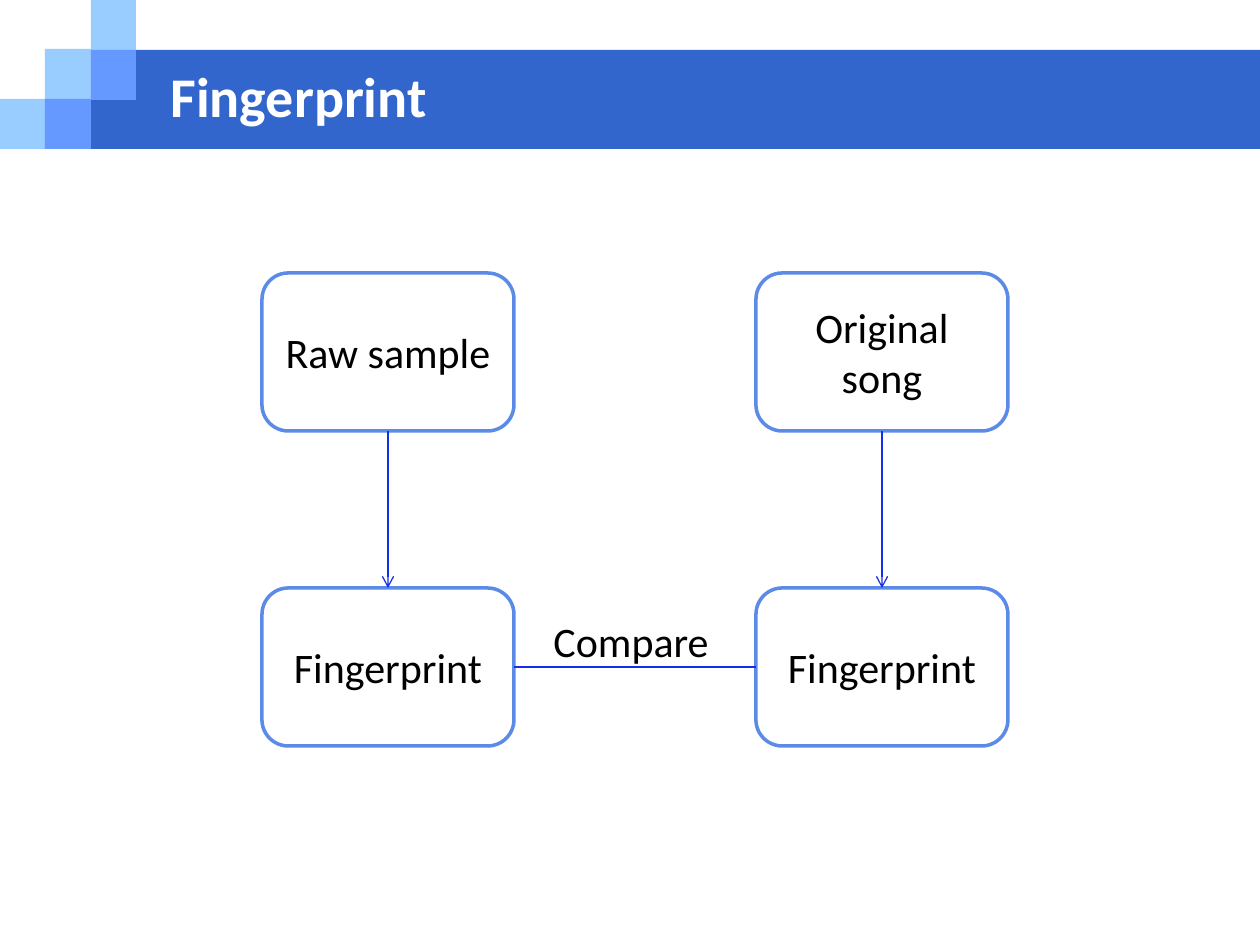
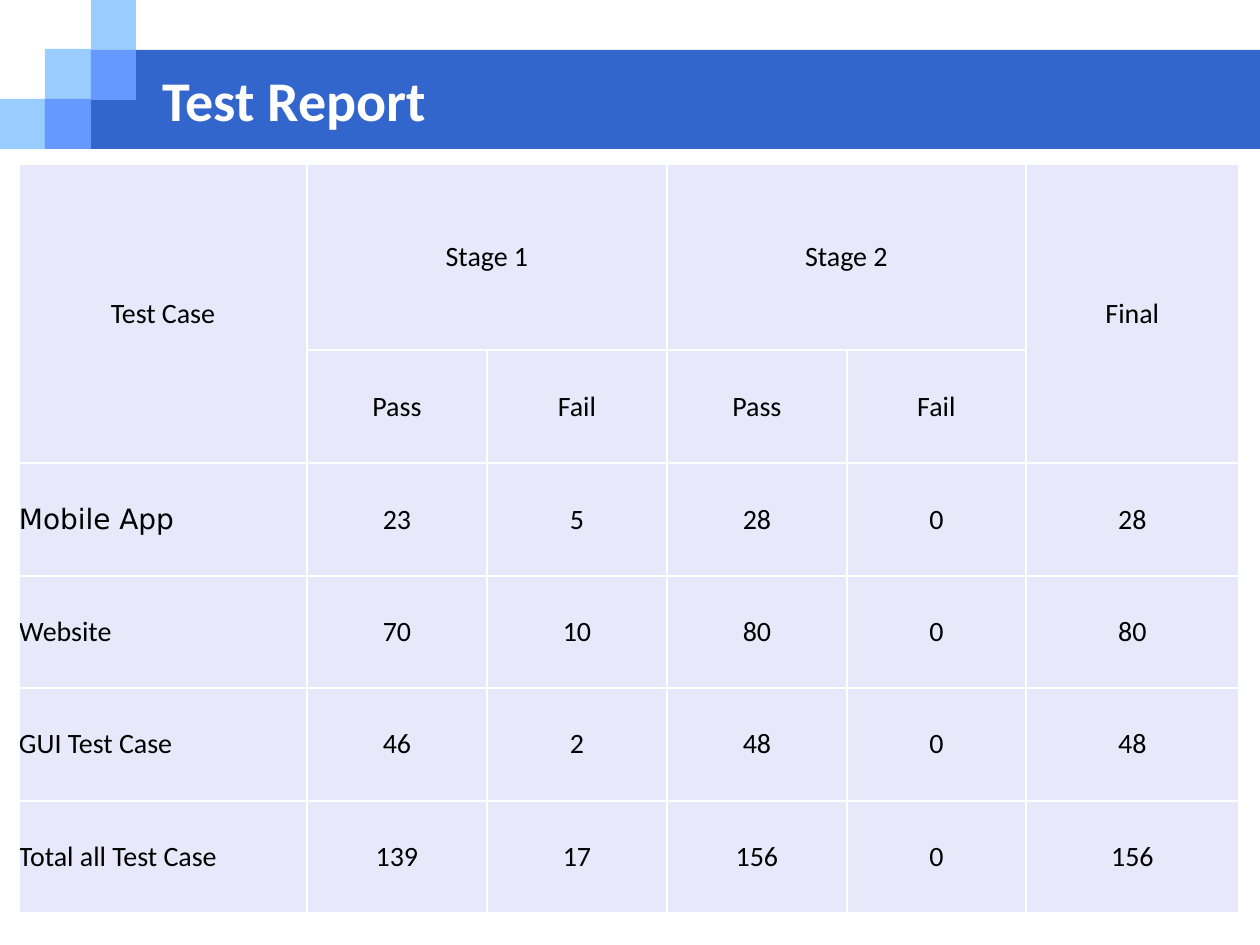
from lxml import etree
from pptx import Presentation
from pptx import util as u
from pptx.dml.color import RGBColor
from pptx.enum import shapes, text
from pptx.oxml import ns

PX_PER_INCH = 126
FONT = "Calibri"
COLORS = {
    "band": "3366CC", "light": "99CCFF", "mid": "6699FF",
    "white": "FFFFFF", "black": "000000",
    "box_line": "5C8AE7", "link": "152EE7", "cell": "E8E8FA",
}
LEFT, CENTER = text.PP_ALIGN.LEFT, text.PP_ALIGN.CENTER
TOP, MIDDLE = text.MSO_ANCHOR.TOP, text.MSO_ANCHOR.MIDDLE

# Header blocks: left, top, width, height, colour
HEADER = [
    (91, 50, 1169, 99, "band"),
    (0, 99, 45, 50, "light"),
    (45, 49, 46, 50, "light"),
    (91, 0, 45, 50, "light"),
    (91, 50, 45, 50, "mid"),
    (45, 99, 46, 50, "mid"),
]

# Test results
REPORT = [
    ["Test Case", "Stage 1", "", "Stage 2", "", "Final"],
    ["", "Pass", "Fail", "Pass", "Fail", ""],
    ["Mobile App", 23, 5, 28, 0, 28],
    ["Website", 70, 10, 80, 0, 80],
    ["GUI Test Case", 46, 2, 48, 0, 48],
    ["Total all Test Case", 139, 17, 156, 0, 156],
]
HEADER_ROWS = 2
MERGES = [((0, 0), (1, 0)), ((0, 1), (0, 2)), ((0, 3), (0, 4)), ((0, 5), (1, 5))]
COLUMN_WIDTHS = [288, 180, 180, 180, 179, 213]
ROW_HEIGHTS = [186, 113, 113, 112, 113, 112]


def px(length):
    return u.Emu(round(length * 914400 / PX_PER_INCH))


def color(name):
    return RGBColor.from_string(COLORS[name])


def add_element(parent, tag, **attributes):
    return etree.SubElement(parent, ns.qn(tag), attributes)


def write(frame, words, size=24, font=FONT, ink="black", bold=False,
          align=LEFT, anchor=MIDDLE, wrap=True):
    """Put one formatted paragraph into a text frame."""
    frame.word_wrap = wrap
    frame.vertical_anchor = anchor
    para = frame.paragraphs[0]
    para.alignment = align
    span = para.add_run()
    span.text = str(words)
    span.font.size = u.Pt(size)
    span.font.name = font
    span.font.bold = bold
    span.font.color.rgb = color(ink)


def add_block(page, kind, bounds, fill, line=None):
    block = page.shapes.add_shape(kind, *map(px, bounds))
    block.shadow.inherit = False
    block.fill.solid()
    block.fill.fore_color.rgb = color(fill)
    if line:
        block.line.color.rgb = color(line)
        block.line.width = u.Pt(2)
    else:
        block.line.fill.background()
    return block


def add_page(deck, heading, bounds, anchor=MIDDLE, wrap=True):
    """Add a slide with the header blocks and its title on top of them."""
    page = deck.slides.add_slide(deck.slide_layouts[5])
    for *block_bounds, fill in HEADER:
        add_block(page, shapes.MSO_SHAPE.RECTANGLE, block_bounds, fill)
    title = page.shapes.title
    title.left, title.top, title.width, title.height = map(px, bounds)
    write(title.text_frame, heading, size=32, ink="white", bold=True,
          anchor=anchor, wrap=wrap)
    page.shapes.element.append(title.element)
    return page


def add_step(page, words, left, top):
    box = add_block(page, shapes.MSO_SHAPE.ROUNDED_RECTANGLE,
                    (left, top, 252, 158), "white", "box_line")
    write(box.text_frame, words, align=CENTER)
    return box


def add_link(page, start, start_side, end, end_side, arrow=False):
    link = page.shapes.add_connector(shapes.MSO_CONNECTOR.STRAIGHT, 0, 0, 0, 0)
    link.begin_connect(start, start_side)
    link.end_connect(end, end_side)
    link.line.color.rgb = color("link")
    link.line.width = u.Pt(0.75)
    if arrow:
        add_element(link.line._get_or_add_ln(), "a:tailEnd", type="arrow")
    add_element(link.element.spPr, "a:effectLst")


def add_borders(cell):
    properties = cell._tc.get_or_add_tcPr()
    for side in ("a:lnL", "a:lnR", "a:lnT", "a:lnB"):
        border = add_element(properties, side, w=str(u.Pt(1)))
        fill = add_element(border, "a:solidFill")
        add_element(fill, "a:srgbClr", val=COLORS["white"])


def add_report(page, left, top):
    frame = page.shapes.add_table(
        len(REPORT), len(COLUMN_WIDTHS), px(left), px(top),
        px(sum(COLUMN_WIDTHS)), px(sum(ROW_HEIGHTS)))
    table = frame.table
    table.first_row = table.horz_banding = False
    for column, width in zip(table.columns, COLUMN_WIDTHS):
        column.width = px(width)
    for row, height in zip(table.rows, ROW_HEIGHTS):
        row.height = px(height)
    for first, last in MERGES:
        table.cell(*first).merge(table.cell(*last))

    for r, values in enumerate(REPORT):
        for c, value in enumerate(values):
            cell = table.cell(r, c)
            add_borders(cell)
            cell.fill.solid()
            cell.fill.fore_color.rgb = color("cell")
            cell.margin_left = cell.margin_right = 0
            cell.margin_top = cell.margin_bottom = 0
            cell.vertical_anchor = MIDDLE
            if value == "":
                continue
            is_label = c == 0 and r >= HEADER_ROWS
            first_label = is_label and r == HEADER_ROWS
            write(cell.text_frame, value, size=16,
                  font="DejaVu Sans" if first_label else FONT,
                  align=LEFT if is_label else CENTER)


def build_fingerprint(deck):
    page = add_page(deck, "Fingerprint", (158, 21, 1134, 148))
    prints = []
    for source, left in (("Raw sample", 262), ("Original song", 756)):
        source_box = add_step(page, source, left, 273)
        print_box = add_step(page, "Fingerprint", left, 588)
        add_link(page, source_box, 2, print_box, 0, arrow=True)
        prints.append(print_box)
    add_link(page, prints[0], 3, prints[1], 1)
    label = page.shapes.add_textbox(*map(px, (541, 609, 182, 63)))
    write(label.text_frame, "Compare", anchor=TOP, wrap=False)


def build_test_report(deck):
    page = add_page(deck, "Test Report", (150, 59, 291, 118), anchor=TOP, wrap=False)
    add_report(page, 19, 164)


def main():
    deck = Presentation()
    deck.slide_width, deck.slide_height = px(1260), px(945)
    build_fingerprint(deck)
    build_test_report(deck)
    deck.save("out.pptx")


if __name__ == "__main__":
    main()
